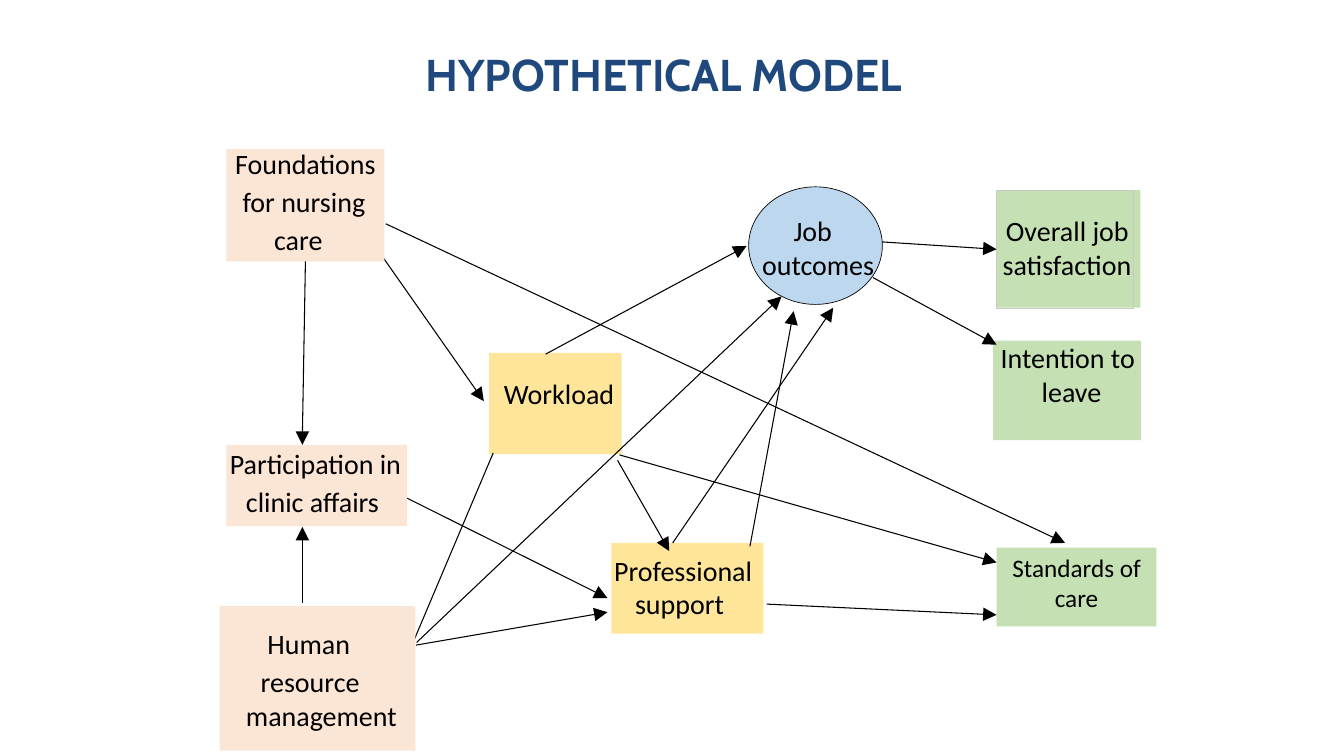
from math import hypot

from lxml.etree import SubElement
from pptx import Presentation
from pptx.dml.color import RGBColor
from pptx.enum.shapes import MSO_CONNECTOR as Connector, MSO_SHAPE as Preset
from pptx.enum.text import MSO_ANCHOR as Anchor, PP_ALIGN as Align
from pptx.oxml.ns import qn
from pptx.util import Inches, Pt

BLACK = RGBColor(0x00, 0x00, 0x00)
NAVY = RGBColor(0x1F, 0x49, 0x7D)
GREEN = RGBColor(0xC5, 0xE0, 0xB3)
BLUE = RGBColor(0xBD, 0xD7, 0xEE)
YELLOW = RGBColor(0xFE, 0xE5, 0x99)
PEACH = RGBColor(0xFB, 0xE5, 0xD5)
GREY = RGBColor(0xC8, 0xC8, 0xC8)

COLUMNS, ROWS = 20, 11.25
BOTTOM_SIDE = 2


def write(frame, text, font="Calibri", size=30, color=BLACK, bold=False,
          aligns=(Align.LEFT,), anchor=Anchor.TOP, margins=(0, 0)):
    """Fill a text frame, one paragraph per line and one alignment for each."""
    frame.word_wrap = True
    frame.vertical_anchor = anchor
    frame.margin_left = frame.margin_right = Inches(margins[0])
    frame.margin_top = frame.margin_bottom = Inches(margins[1])
    frame.text = text
    for paragraph, align in zip(frame.paragraphs, aligns):
        paragraph.alignment = align
        run_font = paragraph.runs[0].font
        run_font.name, run_font.size = font, Pt(size)
        run_font.bold, run_font.color.rgb = bold, color


class Diagram:
    """Holds the slide, its grid and the style of boxes, labels and arrows."""

    line_width = Pt(1.13)
    head_size = 0.2
    line_gap = 0.16
    label_height = 0.5

    def __init__(self, presentation):
        self.slide = presentation.slides.add_slide(presentation.slide_layouts[5])
        self.shapes = self.slide.shapes
        self.column = presentation.slide_width / COLUMNS
        self.row = presentation.slide_height / ROWS

    def place(self, column, row):
        return round(column * self.column), round(row * self.row)

    def title(self, text, left, top, width, height):
        title = self.shapes.title
        title.left, title.top = self.place(left, top)
        title.width, title.height = self.place(width, height)
        write(title.text_frame, text, font="Cabin", size=47.7, color=NAVY,
              bold=True, aligns=[Align.CENTER], anchor=Anchor.BOTTOM,
              margins=(0.1, 0.05))

    def box(self, left, top, width, height, fill=None, line=None,
            line_width=0, preset=Preset.RECTANGLE):
        shape = self.shapes.add_shape(
            preset, *self.place(left, top), *self.place(width, height))
        self.style(shape, fill, line, line_width)
        return shape

    def style(self, shape, fill, line=None, line_width=0):
        shape.shadow.inherit = False
        if fill is None:
            shape.fill.background()
        else:
            shape.fill.solid()
            shape.fill.fore_color.rgb = fill
        if line is None:
            shape.line.fill.background()
        else:
            shape.line.color.rgb = line
            shape.line.width = Pt(line_width)

    def label(self, text, left, top, width, aligns=(Align.LEFT,)):
        height = self.label_height * len(aligns)
        shape = self.shapes.add_textbox(
            *self.place(left, top), *self.place(width, height))
        write(shape.text_frame, text, aligns=aligns)

    def line(self, start, end):
        connector = self.shapes.add_connector(
            Connector.STRAIGHT, *self.place(*start), *self.place(*end))
        connector.line.color.rgb = BLACK
        connector.line.width = self.line_width
        properties = connector._element.find(qn("p:spPr"))
        SubElement(properties, qn("a:effectLst"))
        return connector

    def arrow(self, start, tip):
        """Draw a line that stops inside a solid triangle pointing at the tip."""
        length = hypot(tip[0] - start[0], tip[1] - start[1])
        across, down = ((b - a) / length for a, b in zip(start, tip))

        def behind(distance, sideways=0):
            return (tip[0] - distance * across - sideways * down,
                    tip[1] - distance * down + sideways * across)

        connector = self.line(start, behind(self.line_gap))
        half = self.head_size / 2
        builder = self.shapes.build_freeform(*self.place(*tip))
        builder.add_line_segments(
            [self.place(*behind(self.head_size, side)) for side in (half, -half)])
        self.style(builder.convert_to_shape(), BLACK)
        return connector


def main():
    presentation = Presentation()
    presentation.slide_width = Inches(20)
    presentation.slide_height = Inches(11.25)
    diagram = Diagram(presentation)

    diagram.title("HYPOTHETICAL MODEL", 5.37, 0, 9.02, 1.54)

    # Outcomes on the right
    diagram.box(14.83, 2.83, 2.14, 1.75, GREEN)
    diagram.box(14.83, 2.83, 2.04, 1.75, line=GREY, line_width=0.25)
    diagram.label("Overall job", 14.97, 3.18, 2.05)
    diagram.label("satisfaction", 14.92, 3.68, 1.94)
    diagram.box(14.78, 5.07, 2.2, 1.48, GREEN)
    diagram.label("Intention to\nleave", 14.89, 5.07, 2.11,
                  aligns=(Align.LEFT, Align.CENTER))
    standards = diagram.box(14.83, 8.15, 2.38, 1.17, GREEN)
    write(standards.text_frame, "Standards of care", size=27,
          aligns=[Align.CENTER], margins=(0.15, 0.07))

    # Job outcomes circle
    diagram.box(11.14, 2.78, 1.99, 1.75, BLUE, line=BLACK, preset=Preset.OVAL)
    diagram.label("Job", 11.81, 3.18, 0.67)
    diagram.label("outcomes", 11.34, 3.68, 1.68)

    # Mediators in the middle
    diagram.box(7.28, 5.25, 1.97, 1.51, YELLOW)
    diagram.label("Workload", 7.5, 5.6, 1.66)
    diagram.box(9.1, 8.08, 2.26, 1.35, YELLOW)
    diagram.label("Professional", 9.14, 8.23, 2.17)
    diagram.label("support", 9.45, 8.73, 1.34)

    # Paths between the factors
    diagram.line((6.13, 9.6), (7.34, 6.74))
    for start, tip in [
        ((12.99, 4.13), (14.83, 5.13)),  # job outcomes
        ((13.13, 3.6), (14.83, 3.71)),
        ((5.58, 3.66), (7.2, 5.97)),  # foundations
        ((5.74, 3.33), (15.85, 8.08)),
        ((5.89, 7.33), (9.04, 8.9)),  # participation
        ((6.2, 9.56), (11.63, 4.41)),  # human resources
        ((6.19, 9.6), (9.04, 9.11)),
        ((8.12, 5.27), (11.11, 3.66)),  # workload
        ((9.19, 6.85), (9.96, 8.2)),
        ((9.22, 6.77), (14.83, 8.37)),
        ((11.16, 8.13), (11.81, 4.63)),  # professional support
        ((10.01, 8.08), (12.4, 4.58)),
        ((11.41, 8.99), (14.83, 9.15)),
    ]:
        diagram.arrow(start, tip)

    # Predictors on the left
    foundations = diagram.box(3.37, 2.22, 2.35, 1.67, PEACH)
    diagram.box(3.37, 6.62, 2.69, 1.21, PEACH)
    diagram.box(3.27, 9.02, 2.91, 2.15, PEACH)
    for text, left, top, width in [
        ("Foundations", 3.5, 2.18, 2.21),
        ("for nursing", 3.61, 2.75, 1.94),
        ("care", 4.08, 3.31, 0.73),
        ("Participation in", 3.42, 6.64, 2.77),
        ("clinic affairs", 3.66, 7.21, 2.28),
        ("Human", 3.98, 9.32, 1.34),
        ("resource", 3.88, 9.89, 1.58),
        ("management", 3.66, 10.4, 3.02),
    ]:
        diagram.label(text, left, top, width)
    downward = diagram.arrow((4.5, 3.9), (4.5, 6.62))
    downward.begin_connect(foundations, BOTTOM_SIDE)
    diagram.arrow((4.5, 8.98), (4.5, 7.84))

    presentation.save("out.pptx")


if __name__ == "__main__":
    main()
